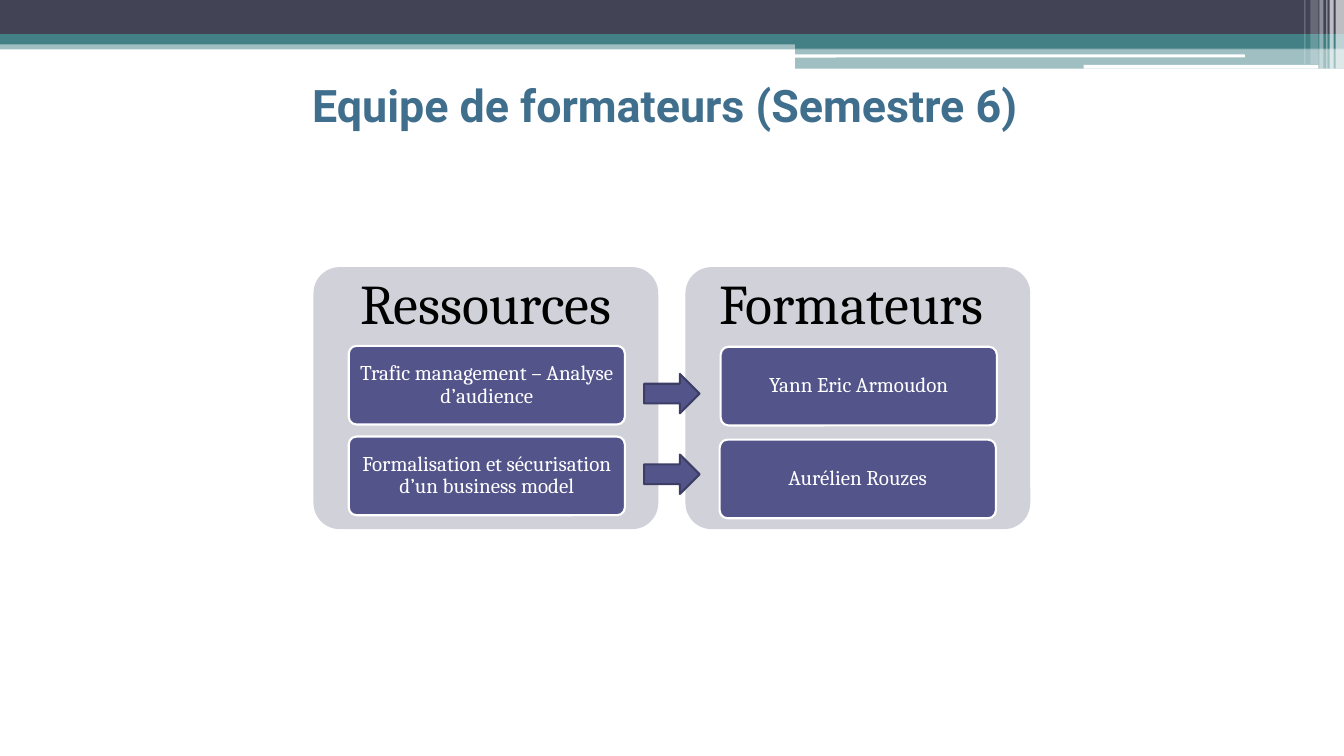
from dataclasses import dataclass

from lxml.etree import SubElement
from pptx import Presentation
from pptx.dml.color import RGBColor
from pptx.enum.shapes import MSO_SHAPE
from pptx.enum.text import MSO_ANCHOR, PP_ALIGN
from pptx.oxml.ns import qn
from pptx.shapes.autoshape import Shape
from pptx.slide import Slide
from pptx.util import Pt

COLORS = {
    "white": "FFFFFF",
    "black": "000000",
    "slate": "424456",
    "teal": "438086",
    "title": "406F8D",
    "panel": "D1D1DA",
    "card": "53548A",
    "arrow_line": "3D3E66",
}
TITLE_FORMAT = {"name": "Roboto", "size": Pt(32), "bold": True}
HEADING_FORMAT = {"name": "Cambria", "size": Pt(40)}
CARD_FORMAT = {"name": "Cambria", "size": Pt(15)}

PANEL_TOP, PANEL_WIDTH, PANEL_HEIGHT = 190.8, 246.3, 187.2
HEADING_HEIGHT = 56.2
CARD_WIDTH, CARD_HEIGHT = 197.3, 56.2
STRIPE_HEIGHT = 49


@dataclass(frozen=True)
class Box:
    left: float
    top: float
    width: float
    height: float

    def lengths(self) -> list[Pt]:
        return [Pt(value) for value in (self.left, self.top, self.width, self.height)]


@dataclass(frozen=True)
class Bar:
    box: Box
    color: str
    opacity: int = 100
    rounded: bool = False


@dataclass(frozen=True)
class Card:
    left: float
    top: float
    text: str


@dataclass(frozen=True)
class Panel:
    left: float
    heading: str
    cards: tuple[Card, ...]


HEADER_BARS = (
    Bar(Box(0, 28.8, 960, 6.5), "teal", 50),
    Bar(Box(0, 0, 960, 24.5), "slate"),
    Bar(Box(0, 24.5, 960, 7.2), "teal"),
    Bar(Box(568, 28.1, 392, 6.7), "teal"),
    Bar(Box(568, 34.8, 392, 14.2), "teal", 50),
    Bar(Box(567.4, 38.9, 321.8, 2.2), "white", rounded=True),
    Bar(Box(774, 46.3, 167.8, 2.7), "white", rounded=True),
    Bar(Box(954, 0, 6, STRIPE_HEIGHT), "white", 65),
    Bar(Box(949.7, 0, 2.9, STRIPE_HEIGHT), "white", 65),
    Bar(Box(947.5, 0, 0.7, STRIPE_HEIGHT), "white", 60),
    Bar(Box(942.5, 0, 2.9, STRIPE_HEIGHT), "white", 40),
    Bar(Box(936, 0, 5.8, 46.1), "white", 20),
    Bar(Box(931.7, 0, 0.7, 46.1), "white", 30),
)
PANELS = (
    Panel(223.9, "Ressources", (
        Card(249.1, 247, "Trafic management – Analyse d’audience"),
        Card(249.1, 311.8, "Formalisation et sécurisation d’un business model"),
    )),
    Panel(489.6, "Formateurs ", (
        Card(514.8, 247.7, "Yann Eric Armoudon"),
        Card(514.1, 314, "Aurélien Rouzes"),
    )),
)
ARROWS = (Box(460.1, 267.1, 39.6, 28.1), Box(460.1, 324.7, 39.6, 28.1))


def color(name: str) -> RGBColor:
    return RGBColor.from_string(COLORS[name])


def add_filled(slide: Slide, kind: MSO_SHAPE, box: Box, fill: str,
               line: str | None = None) -> Shape:
    shape = slide.shapes.add_shape(kind, *box.lengths())
    shape.shadow.inherit = False
    shape.fill.solid()
    shape.fill.fore_color.rgb = color(fill)
    if line:
        shape.line.color.rgb = color(line)
        shape.line.width = Pt(1.5)
    else:
        shape.line.fill.background()
    return shape


def write_text(shape: Shape, text: str, text_color: str, font_format: dict,
               inset_x: float, inset_y: float, line_spacing: float = 0.9) -> None:
    frame = shape.text_frame
    frame_format = {
        "word_wrap": True,
        "vertical_anchor": MSO_ANCHOR.MIDDLE,
        "margin_left": Pt(inset_x),
        "margin_right": Pt(inset_x),
        "margin_top": Pt(inset_y),
        "margin_bottom": Pt(inset_y),
    }
    for name, value in frame_format.items():
        setattr(frame, name, value)
    paragraph = frame.paragraphs[0]
    paragraph.alignment = PP_ALIGN.CENTER
    paragraph.line_spacing = line_spacing
    run = paragraph.add_run()
    run.text = text
    for name, value in font_format.items():
        setattr(run.font, name, value)
    run.font.color.rgb = color(text_color)


def add_bar(slide: Slide, bar: Bar) -> None:
    kind = MSO_SHAPE.ROUNDED_RECTANGLE if bar.rounded else MSO_SHAPE.RECTANGLE
    shape = add_filled(slide, kind, bar.box, bar.color)
    if bar.opacity < 100:
        fill_color = shape._element.spPr.find(qn("a:solidFill"))[0]
        SubElement(fill_color, qn("a:alpha"), val=str(bar.opacity * 1000))


def add_title(slide: Slide) -> None:
    title = slide.shapes.add_textbox(*Box(54.7, 31.7, 832.3, 86.4).lengths())
    write_text(title, "Equipe de formateurs (Semestre 6)", "title", TITLE_FORMAT,
               7.2, 3.6, line_spacing=1)
    paragraph = title.text_frame.paragraphs[0]
    paragraph.space_before = Pt(3)
    properties = paragraph._p.get_or_add_pPr()
    properties.set("marL", str(Pt(28.8)))
    properties.set("indent", str(Pt(-20.2)))


def add_panel(slide: Slide, panel: Panel) -> None:
    background = add_filled(slide, MSO_SHAPE.ROUNDED_RECTANGLE,
                            Box(panel.left, PANEL_TOP, PANEL_WIDTH, PANEL_HEIGHT), "panel")
    background.adjustments[0] = 0.1
    heading_box = Box(panel.left, PANEL_TOP, PANEL_WIDTH, HEADING_HEIGHT)
    heading = slide.shapes.add_textbox(*heading_box.lengths())
    write_text(heading, panel.heading, "black", HEADING_FORMAT, 12, 12)
    for card in panel.cards:
        shape = add_filled(slide, MSO_SHAPE.ROUNDED_RECTANGLE,
                           Box(card.left, card.top, CARD_WIDTH, CARD_HEIGHT),
                           "card", "white")
        shape.adjustments[0] = 0.1
        write_text(shape, card.text, "white", CARD_FORMAT, 3, 2.25)


def main() -> None:
    presentation = Presentation()
    presentation.slide_width, presentation.slide_height = Pt(960), Pt(540)
    slide = presentation.slides.add_slide(presentation.slide_layouts[6])
    for bar in HEADER_BARS:
        add_bar(slide, bar)
    add_title(slide)
    for panel in PANELS:
        add_panel(slide, panel)
    for arrow in ARROWS:
        add_filled(slide, MSO_SHAPE.RIGHT_ARROW, arrow, "card", "arrow_line")
    presentation.save("out.pptx")


if __name__ == "__main__":
    main()
